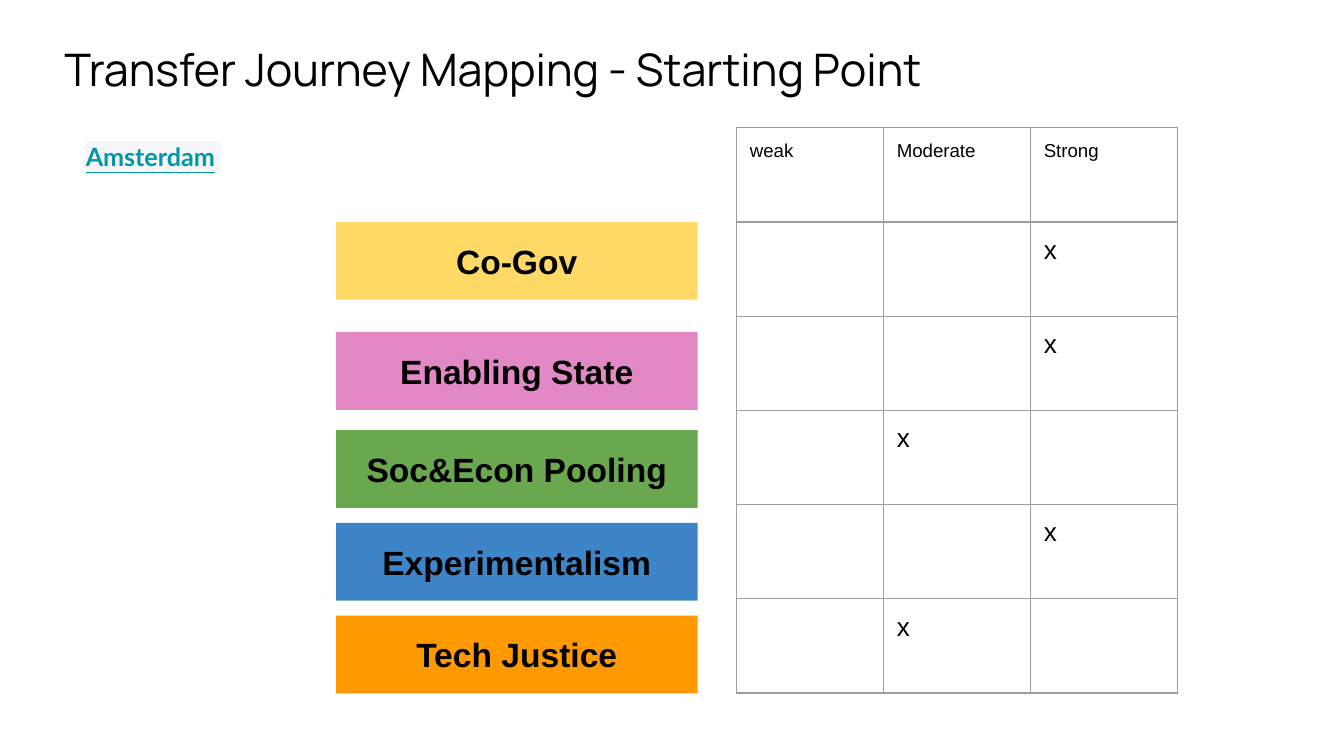
from lxml.etree import SubElement
from pptx import Presentation
from pptx.dml.color import RGBColor
from pptx.enum.shapes import MSO_SHAPE
from pptx.enum.text import MSO_ANCHOR, PP_ALIGN
from pptx.oxml.ns import qn
from pptx.util import Inches, Pt

WIDE, HIGH = Inches(10), Inches(5.625)
PAD = Inches(0.1)
TOP = 16.89
BARS = [
    ("Co-Gov", "FFD966", 29.33),
    ("Enabling State", "E288C4", 43.91),
    ("Soc&Econ Pooling", "6AA84F", 56.89),
    ("Experimentalism", "3D85C6", 69.16),
    ("Tech Justice", "FF9900", 81.42),
]
HEADS = ["weak", "Moderate", "Strong"]
MARKS = [2, 2, 1, 2, 1]  # marked column for each bar


def color(code):
    return RGBColor.from_string(code)


def area(left, top, width, height):
    """Turn percent of the slide's size into lengths."""
    return (int(WIDE * left / 100), int(HIGH * top / 100),
            int(WIDE * width / 100), int(HIGH * height / 100))


def pad(item):
    item.margin_left = item.margin_right = PAD
    item.margin_top = item.margin_bottom = PAD


def add_run(para, text, size, face="Arial", code="000000", bold=False):
    run = para.add_run()
    run.text = text
    run.font.size = Pt(size)
    run.font.name = face
    run.font.bold = bold
    run.font.color.rgb = color(code)
    return run


def add_box(slide, *place):
    frame = slide.shapes.add_textbox(*area(*place)).text_frame
    frame.word_wrap = True
    pad(frame)
    return frame.paragraphs[0]


def add_glow(run, code):
    """Put a highlight behind the run."""
    props = run.font._element
    light = SubElement(props, qn("a:highlight"))
    SubElement(light, qn("a:srgbClr"), val=code)
    props.find(qn("a:solidFill")).addnext(light)


def add_bar(slide, text, code, top):
    bar = slide.shapes.add_shape(MSO_SHAPE.RECTANGLE,
                                 *area(25, top, 26.9, 10.31))
    bar.shadow.inherit = False
    bar.fill.solid()
    bar.fill.fore_color.rgb = color(code)
    bar.line.fill.background()
    frame = bar.text_frame
    frame.word_wrap = True
    frame.vertical_anchor = MSO_ANCHOR.MIDDLE
    pad(frame)
    para = frame.paragraphs[0]
    para.alignment = PP_ALIGN.CENTER
    add_run(para, text, 18, bold=True)


def style_cell(cell):
    pad(cell)
    props = cell._tc.get_or_add_tcPr()
    for side in "LRTB":
        line = SubElement(props, qn(f"a:ln{side}"), w=str(Pt(0.75)))
        fill = SubElement(line, qn("a:solidFill"))
        SubElement(fill, qn("a:srgbClr"), val="9E9E9E")
    cell.fill.background()


def add_grid(slide):
    rows, cols = len(MARKS) + 1, len(HEADS)
    place = area(54.8, TOP, 32.8, 12.47 * rows)
    table = slide.shapes.add_table(rows, cols, *place).table
    table.first_row = table.horz_banding = False
    for cell in table.iter_cells():
        style_cell(cell)
    for col, head in enumerate(HEADS):
        add_run(table.cell(0, col).text_frame.paragraphs[0], head, 10)
    for row, col in enumerate(MARKS, 1):
        add_run(table.cell(row, col).text_frame.paragraphs[0], "x", 14)


def main():
    deck = Presentation()
    deck.slide_width, deck.slide_height = WIDE, HIGH
    slide = deck.slides.add_slide(deck.slide_layouts[6])
    title = add_box(slide, 3.8, 3.73, 83.2, 13.33)
    add_run(title, "Transfer Journey Mapping - Starting Point", 24, "Manrope")
    city = add_box(slide, 5.4, TOP, 25.1, 12.09)
    name = add_run(city, "Amsterdam", 13.5, "Lato", "0097A7", True)
    name.font.underline = True
    space = add_run(city, " ", 13.5, "Lato", "48576E", True)
    for run in (name, space):
        add_glow(run, "F5F7FA")
    for bar in BARS:
        add_bar(slide, *bar)
    add_grid(slide)
    deck.save("out.pptx")


if __name__ == "__main__":
    main()
